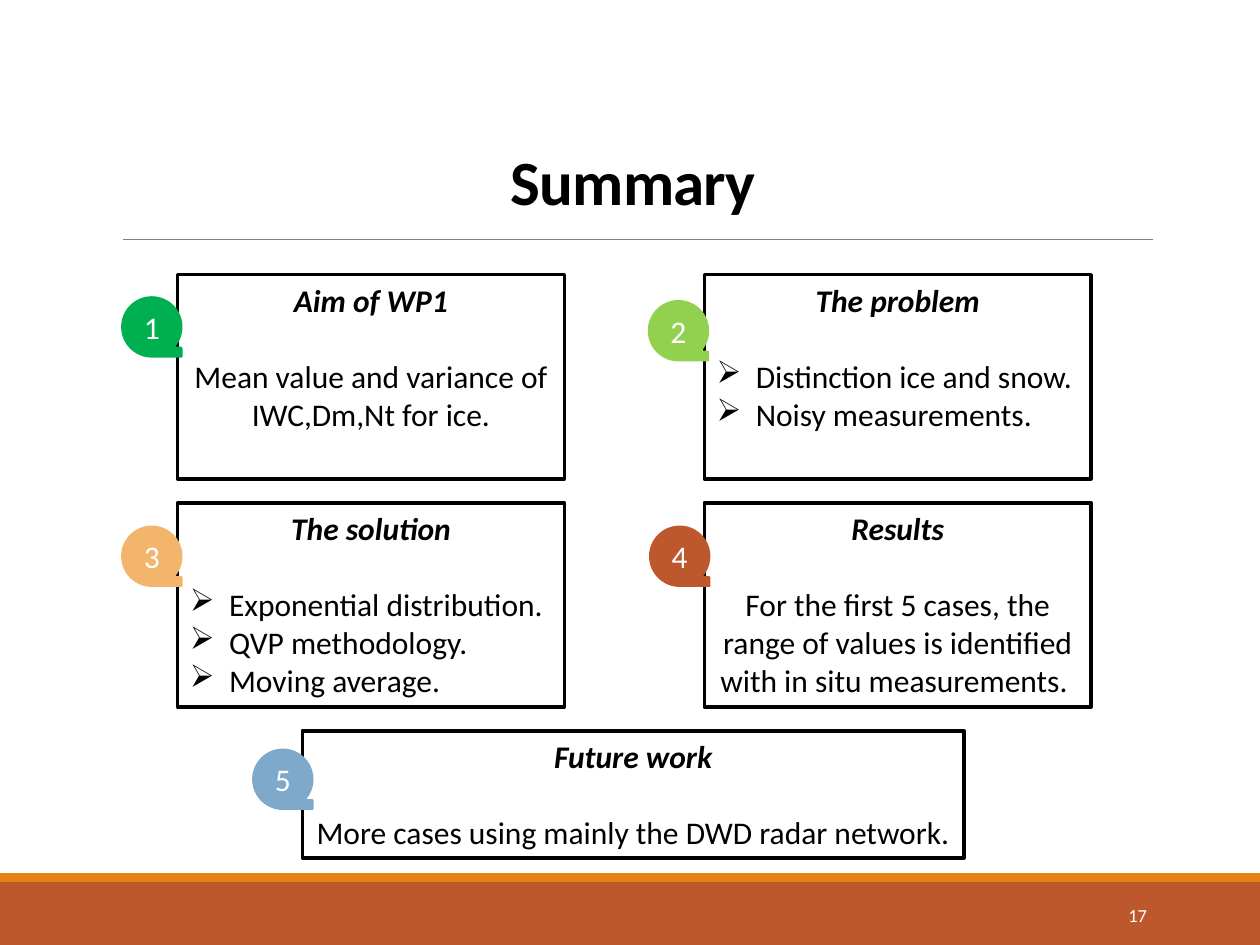
import pptx
import pptx.util
import pptx.dml.color
import pptx.enum.shapes
import pptx.enum.text
import pptx.oxml.ns
import lxml.etree

RGBColor = pptx.dml.color.RGBColor
Shape = pptx.enum.shapes.MSO_SHAPE
Align = pptx.enum.text.PP_ALIGN
Anchor = pptx.enum.text.MSO_ANCHOR
Pt = pptx.util.Pt
qn = pptx.oxml.ns.qn

BLACK = RGBColor(0x00, 0x00, 0x00)
WHITE = RGBColor(0xFF, 0xFF, 0xFF)
GRAY = RGBColor(0x80, 0x80, 0x80)
RUST = RGBColor(0xBD, 0x58, 0x2C)
ORANGE = RGBColor(0xE4, 0x83, 0x12)
GREEN = RGBColor(0x00, 0xB0, 0x50)
LIME = RGBColor(0x92, 0xD0, 0x50)
APRICOT = RGBColor(0xF3, 0xB5, 0x6C)
BLUE = RGBColor(0x7E, 0xA9, 0xCA)

COLUMNS, ROWS = 100, 75
CARD_WIDTH, CARD_HEIGHT = 30.7, 16.2
LEFT, RIGHT = 14.1, 55.9
TOP, MIDDLE, BOTTOM = 21.8, 39.9, 58


def write(paragraph, text, size=18, color=BLACK, bold=False, italic=False,
          align=Align.CENTER, before=0, spacing=None, tracking=None,
          bullet=None, font="Calibri"):
    paragraph.alignment = align
    paragraph.space_before = Pt(before)
    if spacing:
        paragraph.line_spacing = spacing
    run = paragraph.add_run()
    run.text = text
    run.font.name = font
    run.font.size = Pt(size)
    run.font.bold = bold
    run.font.italic = italic
    run.font.color.rgb = color
    if tracking:
        run.font._element.set("spc", str(tracking))
    if bullet:
        properties = paragraph._p.get_or_add_pPr()
        indent = pptx.util.Inches(0.31)
        properties.set("marL", str(indent))
        properties.set("indent", str(-indent))
        lxml.etree.SubElement(properties, qn("a:buChar")).set("char", bullet)


class SummarySlide:
    def __init__(self, deck):
        self.slide = deck.slides.add_slide(deck.slide_layouts[6])
        self.column = deck.slide_width / COLUMNS
        self.row = deck.slide_height / ROWS

    def place(self, left, top, width, height):
        return (round(left * self.column), round(top * self.row),
                round(width * self.column), round(height * self.row))

    def block(self, area, kind=Shape.RECTANGLE, fill=None, line=None, weight=1):
        block = self.slide.shapes.add_shape(kind, *self.place(*area))
        block.shadow.inherit = False
        if fill is None:
            block.fill.background()
        else:
            block.fill.solid()
            block.fill.fore_color.rgb = fill
        if line is None:
            block.line.fill.background()
        else:
            block.line.color.rgb = line
            block.line.width = Pt(weight)
        return block

    def label(self, area, text, anchor, **style):
        frame = self.slide.shapes.add_textbox(*self.place(*area)).text_frame
        frame.word_wrap = True
        frame.vertical_anchor = anchor
        write(frame.paragraphs[0], text, **style)

    def rule(self, start, end, top):
        left, y, width, _ = self.place(start, top, end - start, 0)
        rule = self.slide.shapes.add_connector(
            pptx.enum.shapes.MSO_CONNECTOR.STRAIGHT, left, y, left + width, y)
        rule.line.color.rgb = GRAY
        rule.line.width = Pt(0.5)
        lxml.etree.SubElement(rule._element.spPr, qn("a:effectLst"))

    def card(self, area, heading, body, bulleted=False):
        frame = self.block(area, line=BLACK, weight=2).text_frame
        frame.word_wrap = True
        frame.vertical_anchor = Anchor.TOP
        write(frame.paragraphs[0], heading, bold=True, italic=True)
        for index, text in enumerate(body):
            write(frame.add_paragraph(), text,
                  before=0 if index else 22,
                  align=Align.LEFT if bulleted else Align.CENTER,
                  bullet="➢" if bulleted else None)

    def badge(self, left, top, number, color):
        frame = self.block((left, top, 4.7, 4.7), Shape.FLOWCHART_SEQUENTIAL_ACCESS_STORAGE,
                           color, color, 1.25).text_frame
        frame.vertical_anchor = Anchor.MIDDLE
        write(frame.paragraphs[0], str(number), color=WHITE)


def main():
    deck = pptx.Presentation()
    deck.slide_width = pptx.util.Inches(10)
    deck.slide_height = pptx.util.Inches(7.5)
    summary = SummarySlide(deck)

    summary.block((0, 70, COLUMNS, 5), fill=RUST)
    summary.block((0, 69.3, COLUMNS, 0.7), fill=ORANGE)
    summary.rule(9.8, 91.5, 19)
    summary.label((9, 3.1, 82.5, 14.7), "Summary", Anchor.BOTTOM,
                  size=36, bold=True, spacing=0.85, tracking=-50)
    summary.label((81.2, 70.6, 10.8, 4), "17", Anchor.MIDDLE,
                  size=10.5, color=WHITE, align=Align.RIGHT)

    topics = [
        ((LEFT, TOP, CARD_WIDTH, CARD_HEIGHT), "Aim of WP1",
         ["Mean value and variance of IWC,Dm,Nt for ice."], False, (9.7, 23.6), GREEN),
        ((RIGHT, TOP, CARD_WIDTH, CARD_HEIGHT), "The problem",
         ["Distinction ice and snow.", "Noisy measurements."], True, (51.5, 23.9), LIME),
        ((LEFT, MIDDLE, CARD_WIDTH, CARD_HEIGHT), "The solution",
         ["Exponential distribution.", "QVP methodology.", "Moving average."],
         True, (9.7, 41.8), APRICOT),
        ((RIGHT, MIDDLE, CARD_WIDTH, CARD_HEIGHT), "Results",
         ["For the first 5 cases, the range of values is identified "
          "with in situ measurements. "], False, (51.6, 41.8), RUST),
        ((24, BOTTOM, 52.5, 10.1), "Future work",
         ["More cases using mainly the DWD radar network."], False, (20.1, 59.5), BLUE),
    ]
    for number, (area, heading, body, bulleted, corner, color) in enumerate(topics, 1):
        summary.card(area, heading, body, bulleted)
        summary.badge(*corner, number, color)

    deck.save("out.pptx")


if __name__ == "__main__":
    main()
